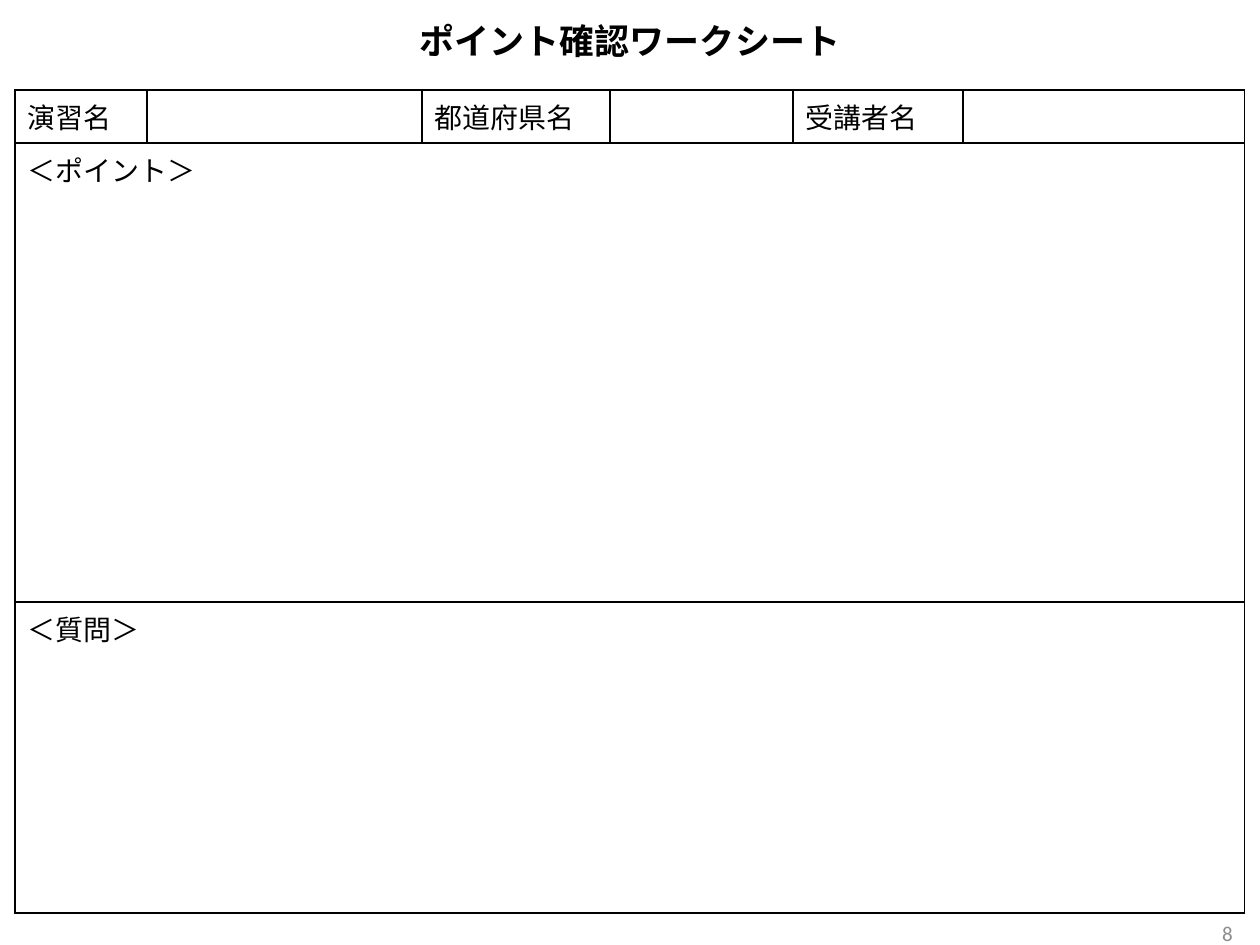
import pptx
import pptx.dml.color
import pptx.enum.text
import pptx.oxml
import pptx.oxml.ns
import pptx.util

EMU_PER_PX = 914400 // 126
FONT = "Calibri"
BLACK = "000000"
GRAY = "8C8C8C"
ALIGN = pptx.enum.text.PP_ALIGN
COLUMN_WIDTHS = [132, 275, 188, 183, 170, 282]
ROW_HEIGHTS = [53, 459, 311]
HEADER_LABELS = ["演習名", "", "都道府県名", "", "受講者名", ""]
SECTION_LABELS = ["＜ポイント＞", "＜質問＞"]


def px(length):
    return pptx.util.Emu(length * EMU_PER_PX)


def color(hex_string):
    return pptx.dml.color.RGBColor.from_string(hex_string)


def write(text_frame, text, size, hex_string=BLACK, bold=False, align=ALIGN.LEFT):
    paragraph = text_frame.paragraphs[0]
    paragraph.text = text
    paragraph.alignment = align
    paragraph.font.name = FONT
    paragraph.font.size = pptx.util.Pt(size)
    paragraph.font.bold = bold
    paragraph.font.color.rgb = color(hex_string)


def add_text(slide, box, text, size, **style):
    shape = slide.shapes.add_textbox(*map(px, box))
    text_frame = shape.text_frame
    text_frame.word_wrap = True
    text_frame.vertical_anchor = pptx.enum.text.MSO_ANCHOR.MIDDLE
    write(text_frame, text, size, **style)


def add_borders(cell, hex_string, points):
    properties = cell._tc.get_or_add_tcPr()
    for position, side in enumerate(("lnL", "lnR", "lnT", "lnB")):
        border = pptx.oxml.parse_xml(
            f'<a:{side} {pptx.oxml.ns.nsdecls("a")} w="{pptx.util.Pt(points)}">'
            f'<a:solidFill><a:srgbClr val="{hex_string}"/></a:solidFill></a:{side}>'
        )
        properties.insert(position, border)


def add_worksheet(slide, left, top):
    frame = slide.shapes.add_table(
        len(ROW_HEIGHTS), len(COLUMN_WIDTHS),
        px(left), px(top), px(sum(COLUMN_WIDTHS)), px(sum(ROW_HEIGHTS)),
    )
    table = frame.table
    table.first_row = False
    table.horz_banding = False
    for column, width in zip(table.columns, COLUMN_WIDTHS):
        column.width = px(width)
    for row, height in zip(table.rows, ROW_HEIGHTS):
        row.height = px(height)
    for cell in table.iter_cells():
        cell.fill.background()
        add_borders(cell, BLACK, 1)
    for index, label in enumerate(HEADER_LABELS):
        write(table.cell(0, index).text_frame, label, 16)
    for row_index, label in enumerate(SECTION_LABELS, start=1):
        cell = table.cell(row_index, 0)
        cell.merge(table.cell(row_index, len(COLUMN_WIDTHS) - 1))
        write(cell.text_frame, label, 16)


def main():
    presentation = pptx.Presentation()
    presentation.slide_width = px(1260)
    presentation.slide_height = px(945)
    slide = presentation.slides.add_slide(presentation.slide_layouts[6])
    add_text(slide, (63, 16, 1134, 48), "ポイント確認ワークシート", 20,
             bold=True, align=ALIGN.CENTER)
    add_text(slide, (951, 908, 294, 50), "8", 12,
             hex_string=GRAY, align=ALIGN.RIGHT)
    add_worksheet(slide, 15, 90)
    presentation.save("out.pptx")


if __name__ == "__main__":
    main()
